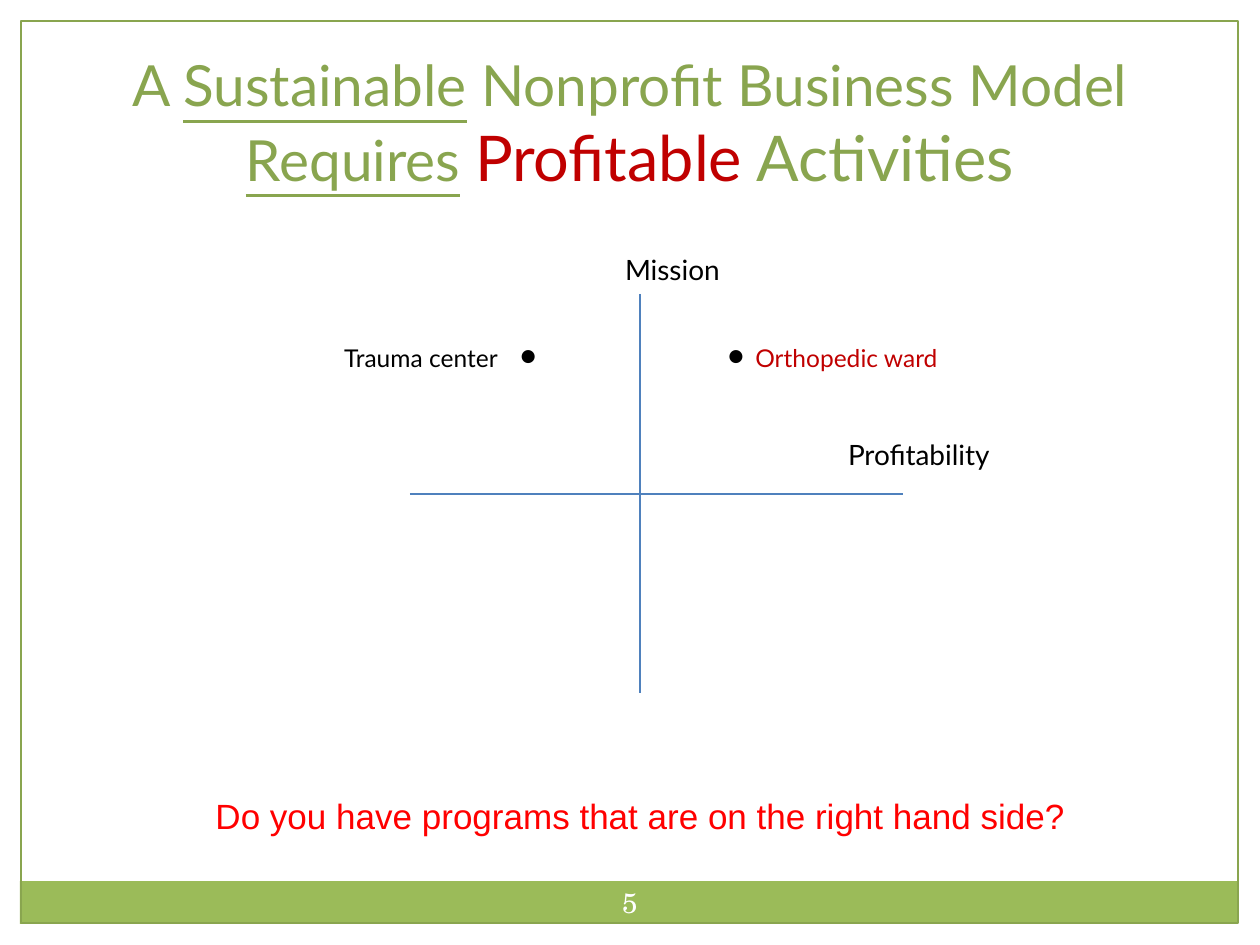
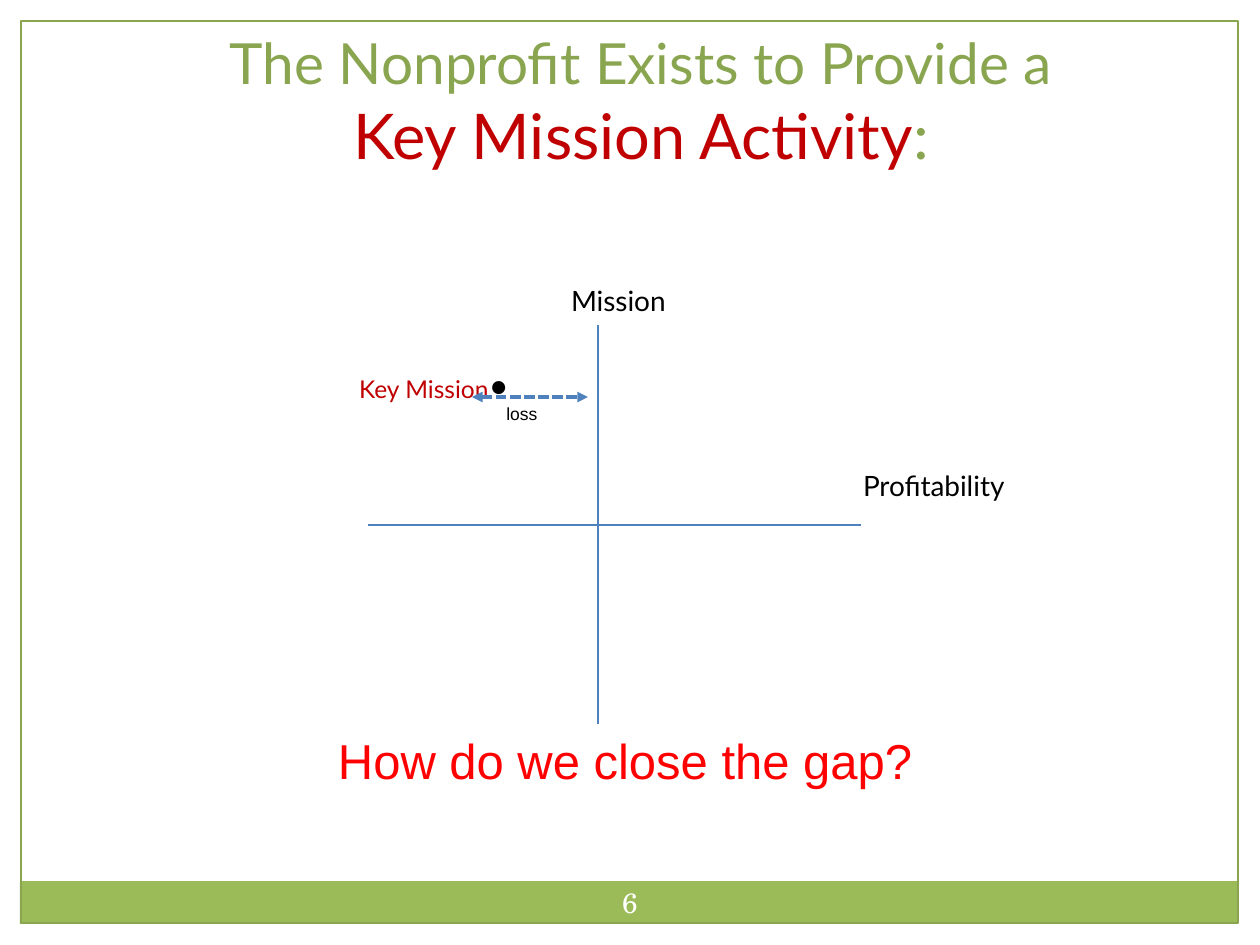
from dataclasses import dataclass

from lxml import etree
from pptx import Presentation
from pptx.dml.color import RGBColor
from pptx.enum.dml import MSO_LINE
from pptx.enum.shapes import MSO_CONNECTOR, MSO_SHAPE
from pptx.enum.text import MSO_ANCHOR, MSO_AUTO_SIZE, PP_ALIGN
from pptx.oxml.ns import qn
from pptx.util import Emu, Pt

CENTER, LEFT = PP_ALIGN.CENTER, PP_ALIGN.LEFT
TOP, MIDDLE, BOTTOM = MSO_ANCHOR.TOP, MSO_ANCHOR.MIDDLE, MSO_ANCHOR.BOTTOM
RECTANGLE, STRAIGHT = MSO_SHAPE.RECTANGLE, MSO_CONNECTOR.STRAIGHT
SYSTEM_DASH = MSO_LINE.SQUARE_DOT
NO_FIT = MSO_AUTO_SIZE.NONE

PX_PER_INCH = 126
EMU_PER_PX = 914400 / PX_PER_INCH


def px(length: int) -> Emu:
    return Emu(round(length * EMU_PER_PX))


@dataclass(frozen=True)
class Theme:
    green: str = "89A54F"
    band: str = "9BBB59"
    crimson: str = "C00000"
    red: str = "FF0000"
    blue: str = "4F81BD"
    black: str = "000000"
    white: str = "FFFFFF"
    heading_font: str = "Lato"
    question_font: str = "Arial"
    number_font: str = "TeX Gyre Schola"
    title_size: float = 32.4
    accent_size: float = 36
    dot_size: float = 20
    axis_size: float = 16
    item_size: float = 14
    note_size: float = 10
    thin: float = 0.75
    thick: float = 2


THEME = Theme()


@dataclass(frozen=True)
class Box:
    left: int
    top: int
    width: int
    height: int

    def emu(self) -> tuple[Emu, ...]:
        return px(self.left), px(self.top), px(self.width), px(self.height)


@dataclass(frozen=True)
class Style:
    font: str
    size: float
    color: str


@dataclass(frozen=True)
class Span:
    """A piece of text; unset values follow its paragraph."""
    text: str
    size: float | None = None
    color: str | None = None
    underline: bool = False
    tracking: int = 0


@dataclass(frozen=True)
class Row:
    """A line of the plot, indented to its place on the axes."""
    spans: tuple[Span, ...]
    indent: int
    space_before: int = 0


@dataclass(frozen=True)
class Line:
    x1: int
    y1: int
    x2: int
    y2: int


@dataclass(frozen=True)
class Label:
    text: str
    box: Box
    style: Style
    align: PP_ALIGN = CENTER


@dataclass(frozen=True)
class Page:
    number: str
    title_box: Box
    title_lines: tuple[tuple[Span, ...], ...]
    plot_box: Box
    mission_indent: int
    items: tuple[Span, ...]
    axes: tuple[Line, ...]
    labels: tuple[Label, ...]
    loss_arrow: Line | None = None


# Shared places and text styles
BAND_BOX = Box(20, 881, 1217, 43)
FRAME_BOX = Box(21, 21, 1217, 902)
NUMBER_BOX = Box(588, 872, 84, 60)
NUMBER_INSET = 6
PLOT_TOP_INSET = 85
ITEM_GAP, PROFIT_GAP = 46, 63
ITEM_INDENT, PROFIT_INDENT = 302, 806

TITLE = Style(THEME.heading_font, THEME.title_size, THEME.green)
PLOT = Style(THEME.heading_font, THEME.axis_size, THEME.black)
NUMBER = Style(THEME.number_font, THEME.axis_size, THEME.white)
NOTE = Style(THEME.question_font, THEME.note_size, THEME.black)


def question(size: float) -> Style:
    return Style(THEME.question_font, size, THEME.red)


def set_font(font, style: Style) -> None:
    font.name = style.font
    font.size = Pt(style.size)
    font.color.rgb = RGBColor.from_string(style.color)


def add_spans(para, spans: tuple[Span, ...]) -> None:
    for span in spans:
        run = para.add_run()
        run.text = span.text
        if span.size:
            run.font.size = Pt(span.size)
        if span.color:
            run.font.color.rgb = RGBColor.from_string(span.color)
        if span.underline:
            run.font.underline = True
        if span.tracking:  # stored in hundredths of a point
            run._r.get_or_add_rPr().set("spc", str(span.tracking * 100))


def place(shape, box: Box, anchor: MSO_ANCHOR):
    shape.left, shape.top, shape.width, shape.height = box.emu()
    frame = shape.text_frame
    frame.word_wrap = True
    frame.auto_size = NO_FIT
    frame.vertical_anchor = anchor
    return frame


def add_title(slide, page: Page) -> None:
    frame = place(slide.shapes.title, page.title_box, BOTTOM)
    para = frame.paragraphs[0]
    para.alignment = CENTER
    set_font(para.font, TITLE)
    for index, spans in enumerate(page.title_lines):
        if index:
            para.add_line_break()
        add_spans(para, spans)


def set_indent(para, indent: int) -> None:
    properties = para._p.get_or_add_pPr()
    properties.set("marL", str(px(indent)))
    properties.set("indent", "0")
    etree.SubElement(properties, qn("a:buNone"))


def add_plot_text(slide, page: Page) -> None:
    rows = (
        Row((Span("Mission"),), page.mission_indent),
        Row(page.items, ITEM_INDENT, ITEM_GAP),
        Row((Span("Profitability"),), PROFIT_INDENT, PROFIT_GAP),
    )
    frame = place(slide.placeholders[1], page.plot_box, TOP)
    frame.margin_left = frame.margin_right = 0
    frame.margin_top = px(PLOT_TOP_INSET)
    for index, row in enumerate(rows):
        para = frame.add_paragraph() if index else frame.paragraphs[0]
        set_indent(para, row.indent)
        para.alignment = LEFT
        para.space_before = px(row.space_before)
        set_font(para.font, PLOT)
        add_spans(para, row.spans)


def add_label(slide, label: Label, anchor: MSO_ANCHOR = TOP):
    shape = slide.shapes.add_textbox(*label.box.emu())
    frame = place(shape, label.box, anchor)
    para = frame.paragraphs[0]
    para.text = label.text
    para.alignment = label.align
    set_font(para.font, label.style)
    return frame


def add_line(slide, line: Line, width: float):
    connector = slide.shapes.add_connector(
        STRAIGHT, px(line.x1), px(line.y1), px(line.x2), px(line.y2))
    connector.line.color.rgb = RGBColor.from_string(THEME.blue)
    connector.line.width = Pt(width)
    etree.SubElement(connector._element.spPr, qn("a:effectLst"))
    return connector


def add_double_arrow(slide, line: Line) -> None:
    connector = add_line(slide, line, THEME.thick)
    connector.line.dash_style = SYSTEM_DASH
    outline = connector.line._get_or_add_ln()
    for end in ("a:headEnd", "a:tailEnd"):
        etree.SubElement(outline, qn(end), type="triangle")


def add_band_and_frame(slide) -> None:
    band = slide.shapes.add_shape(RECTANGLE, *BAND_BOX.emu())
    band.fill.solid()
    band.fill.fore_color.rgb = RGBColor.from_string(THEME.band)
    band.line.fill.background()
    border = slide.shapes.add_shape(RECTANGLE, *FRAME_BOX.emu())
    border.fill.background()
    border.line.color.rgb = RGBColor.from_string(THEME.green)
    border.line.width = Pt(THEME.thin)
    for shape in (band, border):
        shape.shadow.inherit = False


def add_page(deck, page: Page) -> None:
    slide = deck.slides.add_slide(deck.slide_layouts[1])
    add_band_and_frame(slide)
    add_title(slide, page)
    add_plot_text(slide, page)
    for axis in page.axes:
        add_line(slide, axis, THEME.thin)
    if page.loss_arrow:
        add_double_arrow(slide, page.loss_arrow)
    for label in page.labels:
        add_label(slide, label)
    frame = add_label(slide, Label(page.number, NUMBER_BOX, NUMBER), MIDDLE)
    frame.margin_left = frame.margin_right = px(NUMBER_INSET)
    frame.margin_top = frame.margin_bottom = px(NUMBER_INSET)


PAGES = (
    Page(
        number="5",
        title_box=Box(42, 95, 1176, 105),
        title_lines=(
            (Span("A "), Span("Sustainable", underline=True),
             Span(" Nonprofit Business Model")),
            (Span("Requires", underline=True), Span(" "),
             Span("Profitable", THEME.accent_size, THEME.crimson),
             Span(" Activities", THEME.accent_size)),
        ),
        plot_box=Box(42, 168, 1172, 630),
        mission_indent=583,
        # Tracked spaces set the dots apart on either side of the axis
        items=(Span("Trauma center", THEME.item_size),
               Span(" ", THEME.item_size, tracking=8),
               Span("•", THEME.dot_size),
               Span(" ", THEME.dot_size, tracking=102),
               Span("• ", THEME.dot_size),
               Span("Orthopedic ward", THEME.item_size, THEME.crimson)),
        axes=(Line(640, 294, 640, 693), Line(410, 494, 903, 494)),
        labels=(Label("Do you have programs that are on the right hand side?",
                      Box(126, 788, 1029, 55), question(20)),),
    ),
    Page(
        number="6",
        title_box=Box(53, 73, 1176, 105),
        title_lines=(
            (Span("The Nonprofit Exists to Provide a"),),
            (Span("Key Mission Activity", THEME.accent_size, THEME.crimson),
             Span(":", THEME.accent_size)),
        ),
        plot_box=Box(57, 199, 1172, 630),
        mission_indent=514,
        items=(Span("Key Mission", THEME.item_size, THEME.crimson),
               Span("•", THEME.dot_size)),
        axes=(Line(598, 325, 598, 724), Line(368, 525, 861, 525)),
        labels=(Label("How do we close the gap?",
                      Box(63, 724, 1124, 72), question(28)),
                Label("loss", Box(494, 397, 63, 34), NOTE, LEFT)),
        loss_arrow=Line(472, 397, 588, 397),
    ),
)


def main() -> None:
    deck = Presentation()
    deck.slide_width, deck.slide_height = px(1260), px(945)
    for page in PAGES:
        add_page(deck, page)
    deck.save("out.pptx")


if __name__ == "__main__":
    main()
